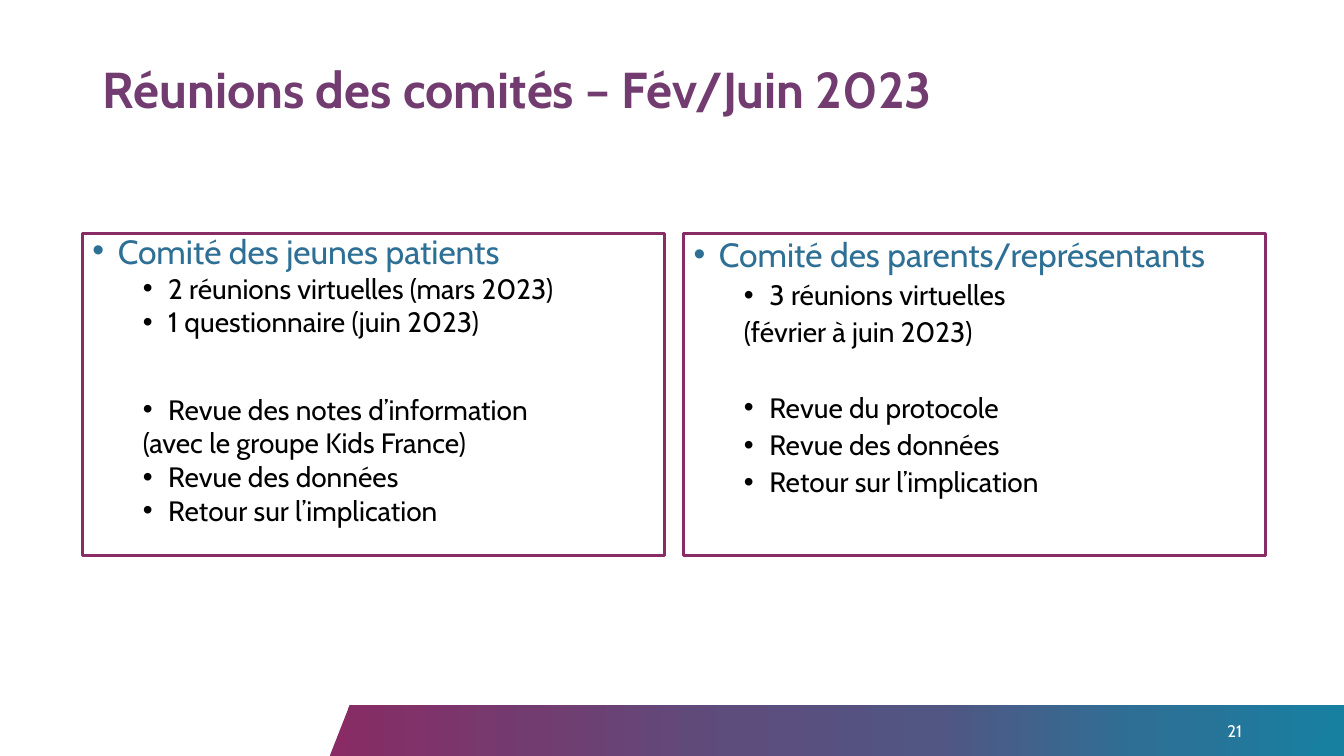
"""Build the committee meetings slide."""
from lxml import etree
from pptx import Presentation
from pptx.dml.color import RGBColor
from pptx.enum.shapes import MSO_SHAPE
from pptx.enum.text import MSO_ANCHOR, MSO_AUTO_SIZE, PP_ALIGN
from pptx.oxml.ns import qn
from pptx.util import Cm, Pt

SLANT, WEDGE, RECT = MSO_SHAPE.PARALLELOGRAM, MSO_SHAPE.RIGHT_TRIANGLE, MSO_SHAPE.RECTANGLE
MIDDLE, TOP = MSO_ANCHOR.MIDDLE, MSO_ANCHOR.TOP
LEFT, RIGHT, JUSTIFY = PP_ALIGN.LEFT, PP_ALIGN.RIGHT, PP_ALIGN.JUSTIFY
NO_FIT = MSO_AUTO_SIZE.NONE

FONT = "Cabin"
PLUM, VIOLET, BLUE, TEAL = "892B64", "723C70", "2E6F95", "1780A1"
BLACK, WHITE = "000000", "FFFFFF"
BAND = [(0, PLUM), (20, VIOLET), (40, "5C4D7D"), (60, "515683"), (80, BLUE), (100, TEAL)]

TITLE = "Réunions des comités – Fév/Juin 2023"
NUMBER = "21"
HEAD, ITEM, NOTE = "head", "item", "note"
STYLES = {
    HEAD: (24, BLUE, 0.64, True, 10),
    ITEM: (20, BLACK, 1.91, True, 5),
    NOTE: (20, BLACK, 1.27, False, 5),
}
PANELS = [
    (0.8, 38, [
        (HEAD, "Comité des jeunes patients"),
        (ITEM, "2 réunions virtuelles (mars 2023)"),
        (ITEM, "1 questionnaire (juin 2023)"),
        (ITEM, "Revue des notes d’information"),
        (NOTE, "(avec le groupe Kids France)"),
        (ITEM, "Revue des données"),
        (ITEM, "Retour sur l’implication"),
    ]),
    (0.9, 27, [
        (HEAD, "Comité des parents/représentants"),
        (ITEM, "3 réunions virtuelles"),
        (NOTE, "(février à juin 2023)"),
        (ITEM, "Revue du protocole"),
        (ITEM, "Revue des données"),
        (ITEM, "Retour sur l’implication"),
    ]),
]
BREAK = 3
WIDE, HIGH = 33.87, 19.05
BAND_X, BAND_Y, EDGE = 8.31, 17.76, 0.94
BOX_X, BOX_Y, BOX_W, BOX_H, GAP = 2.08, 5.88, 14.66, 8.12, 0.49


def color(code):
    return RGBColor.from_string(code)


def style(para, size, code, align, bold=False):
    para.alignment = align
    for run in para.runs:
        font = run.font
        font.name, font.size, font.bold = FONT, Pt(size), bold
        font.color.rgb = color(code)


def indent(para, left, dot):
    props = para._p.get_or_add_pPr()
    props.set("marL", str(Cm(left)))
    props.set("indent", str(-Cm(0.64) if dot else 0))
    if dot:
        etree.SubElement(props, qn("a:buFont")).set("typeface", "Arial")
        etree.SubElement(props, qn("a:buChar")).set("char", "•")
    else:
        etree.SubElement(props, qn("a:buNone"))


def add_shape(slide, kind, x, y, w, h):
    shape = slide.shapes.add_shape(kind, Cm(x), Cm(y), Cm(w), Cm(h))
    shape.shadow.inherit = False
    return shape


def add_band(slide):
    height = HIGH - BAND_Y
    band = add_shape(slide, SLANT, BAND_X, BAND_Y, WIDE - BAND_X, height)
    band.adjustments[0] = 0.393
    band.line.fill.background()
    band.fill.gradient()
    band.fill.gradient_angle = 0
    stops = band._element.spPr.find(".//" + qn("a:gsLst"))
    for stop in list(stops):
        stops.remove(stop)
    for place, code in BAND:
        stop = etree.SubElement(stops, qn("a:gs"), pos=str(place * 1000))
        etree.SubElement(stop, qn("a:srgbClr"), val=code)
    edge = add_shape(slide, WEDGE, WIDE - EDGE, BAND_Y, EDGE, height)
    edge._element.spPr.find(qn("a:xfrm")).set("flipH", "1")
    edge.fill.solid()
    edge.fill.fore_color.rgb = color(TEAL)
    edge.line.fill.background()


def add_title(slide):
    title = slide.shapes.title
    title.left, title.top, title.width, title.height = Cm(2.34), Cm(1.02), Cm(29.21), Cm(2.62)
    frame = title.text_frame
    frame.text = TITLE
    frame.vertical_anchor, frame.auto_size = MIDDLE, NO_FIT
    para = frame.paragraphs[0]
    para.line_spacing = 0.9
    style(para, 36, VIOLET, LEFT, True)


def add_panel(slide, x, pitch, space, rows):
    box = add_shape(slide, RECT, x, BOX_Y, BOX_W, BOX_H)
    box.fill.background()
    box.line.color.rgb = color(PLUM)
    box.line.width = Pt(2)
    frame = box.text_frame
    frame.word_wrap, frame.vertical_anchor = True, TOP
    frame.text = "\n".join(text for _, text in rows)
    for i, (para, (kind, _)) in enumerate(zip(frame.paragraphs, rows)):
        size, code, left, dot, before = STYLES[kind]
        style(para, size, code, JUSTIFY)
        para.line_spacing = pitch
        para.space_before = Pt(before + (space if i == BREAK else 0))
        indent(para, left, dot)


def add_number(slide):
    box = slide.shapes.add_textbox(Cm(23.93), Cm(17.91), Cm(7.62), Cm(1.02))
    frame = box.text_frame
    frame.word_wrap, frame.vertical_anchor = True, MIDDLE
    frame.text = NUMBER
    style(frame.paragraphs[0], 12, WHITE, RIGHT)


def main():
    deck = Presentation()
    deck.slide_width, deck.slide_height = Cm(WIDE), Cm(HIGH)
    slide = deck.slides.add_slide(deck.slide_layouts[5])
    add_band(slide)
    add_title(slide)
    for i, panel in enumerate(PANELS):
        add_panel(slide, BOX_X + i * (BOX_W + GAP), *panel)
    add_number(slide)
    deck.save("out.pptx")


if __name__ == "__main__":
    main()
